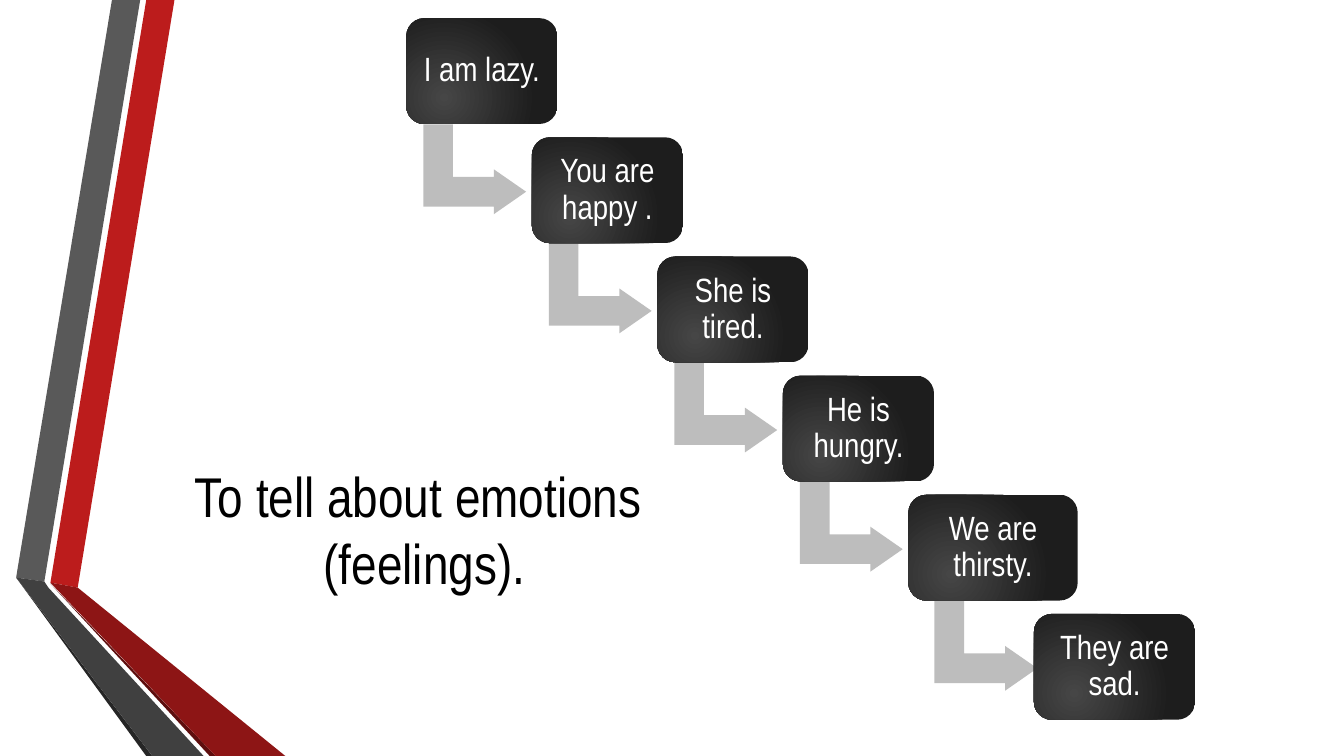
from lxml.etree import SubElement
from pptx import Presentation
from pptx.dml.color import RGBColor
from pptx.enum.shapes import MSO_SHAPE as Preset
from pptx.enum.text import MSO_ANCHOR as Anchor, PP_ALIGN as Align
from pptx.oxml.ns import qn
from pptx.util import Inches, Pt

WIDTH, HEIGHT = Inches(13.33), Inches(7.5)
FONT = "Arial Narrow"

BLACK = RGBColor(0x00, 0x00, 0x00)
WHITE = RGBColor(0xFF, 0xFF, 0xFF)
ARROW_GRAY = RGBColor(0xBD, 0xBD, 0xBD)
CARD_LIGHT = RGBColor(0x46, 0x46, 0x46)
CARD_DARK = RGBColor(0x1D, 0x1D, 0x1D)
RED = RGBColor(0xBC, 0x1C, 0x1C)
RED_FOLD = RGBColor(0x8D, 0x15, 0x15)
RED_EDGE = RGBColor(0x5E, 0x0E, 0x0E)
GRAY = RGBColor(0x59, 0x59, 0x59)
GRAY_FOLD = RGBColor(0x40, 0x40, 0x40)
GRAY_EDGE = RGBColor(0x26, 0x26, 0x26)

# All lengths below are percentages of the slide's width and height
RIBBONS = [
    (RED, [(3.75, 77.07), (5.78, 77.73), (12.98, 0), (10.88, 0)]),
    (GRAY, [(10.43, 0), (8.33, 0), (1.2, 76.4), (3.3, 76.93)]),
    (GRAY_EDGE, [(1.2, 76.4), (10.88, 100), (11.33, 100)]),
    (RED_EDGE, [(3.75, 77.2), (15.6, 100), (16.05, 100)]),
    (RED_FOLD, [(3.75, 77.07), (16.05, 100), (21.23, 100), (5.78, 77.73)]),
    (GRAY_FOLD, [(15.15, 100), (3.6, 77.73), (3.3, 76.93), (1.2, 76.4), (11.33, 100)]),
]

# Staircase: first card, distance between cards, card and arrow sizes
START_X, START_Y = 30.23, 2.4
STEP_X, STEP_Y = 9.34, 15.76
CARD_WIDTH, CARD_HEIGHT = 11.25, 14
ARROW_X, ARROW_Y = 1.75, 13.2
ARROW_WIDTH, ARROW_HEIGHT = 6.68, 13.6
CARDS = [
    ("I am lazy.", CARD_WIDTH),
    ("You are happy .", CARD_WIDTH),
    ("She is tired.", CARD_WIDTH),
    ("He is hungry.", CARD_WIDTH),
    ("We are thirsty.", 12.6),
    ("They are sad.", 12),
]


def across(percent):
    return round(WIDTH * percent / 100)


def down(percent):
    return round(HEIGHT * percent / 100)


def frame(left, top, width, height):
    return across(left), down(top), across(width), down(height)


def set_all(target, values):
    for name, value in values.items():
        setattr(target, name, value)


def paint(shape, color):
    shape.shadow.inherit = False
    shape.line.fill.background()
    shape.fill.solid()
    shape.fill.fore_color.rgb = color


def paint_glow(shape, inner, outer):
    """Fill with a circular gradient centred below the middle."""
    paint(shape, outer)
    shape.fill.gradient()
    for stop, color in zip(shape.fill.gradient_stops, (inner, outer)):
        stop.color.rgb = color
    gradient = shape._element.spPr.find(qn("a:gradFill"))
    gradient.remove(gradient.find(qn("a:lin")))
    circle = SubElement(gradient, qn("a:path"), {"path": "circle"})
    SubElement(circle, qn("a:fillToRect"),
               {"l": "50000", "t": "100000", "r": "100000", "b": "50000"})


def write(shape, lines, size, color, inset, spacing):
    text_frame = shape.text_frame
    set_all(text_frame, {
        "word_wrap": True, "vertical_anchor": Anchor.MIDDLE,
        "margin_left": inset, "margin_right": inset,
        "margin_top": inset, "margin_bottom": inset,
    })
    paragraph = text_frame.paragraphs[0]
    set_all(paragraph, {"alignment": Align.CENTER, "line_spacing": spacing})
    for index, line in enumerate(lines):
        if index:
            paragraph.add_line_break()
        run = paragraph.add_run()
        run.text = line
        set_all(run.font, {"name": FONT, "size": Pt(size)})
        run.font.color.rgb = color


def add_ribbon(slide, color, points):
    corners = [(across(x), down(y)) for x, y in points]
    builder = slide.shapes.build_freeform(*corners[0])
    builder.add_line_segments(corners[1:], close=True)
    paint(builder.convert_to_shape(), color)


def add_title(slide, lines):
    box = slide.shapes.add_textbox(*frame(-9.53, 57.07, 82.22, 25.6))
    write(box, lines, 40, BLACK, Inches(0.1), 1.0)


def add_arrow(slide, left, top):
    arrow = slide.shapes.add_shape(
        Preset.BENT_UP_ARROW, *frame(left, top, ARROW_WIDTH, ARROW_HEIGHT))
    arrow.rotation = 90
    for index, value in enumerate((0.33, 0.25, 0.36)):
        arrow.adjustments[index] = value
    paint(arrow, ARROW_GRAY)


def add_card(slide, text, left, top, width):
    card = slide.shapes.add_shape(
        Preset.ROUNDED_RECTANGLE, *frame(left, top, width, CARD_HEIGHT))
    card.adjustments[0] = 0.17
    paint_glow(card, CARD_LIGHT, CARD_DARK)
    write(card, [text], 24, WHITE, Inches(0.1), 0.9)


def main():
    presentation = Presentation()
    set_all(presentation, {"slide_width": WIDTH, "slide_height": HEIGHT})
    slide = presentation.slides.add_slide(presentation.slide_layouts[6])

    # Folded ribbons on the left
    for color, points in RIBBONS:
        add_ribbon(slide, color, points)

    add_title(slide, ["To tell about emotions ", "(feelings)."])

    # Staircase of cards, each but the last with an arrow to the next
    for index, (text, width) in enumerate(CARDS):
        left, top = START_X + index * STEP_X, START_Y + index * STEP_Y
        if index < len(CARDS) - 1:
            widening = (width - CARD_WIDTH) / 2
            add_arrow(slide, left + ARROW_X + widening, top + ARROW_Y)
        add_card(slide, text, left, top, width)

    presentation.save("out.pptx")


if __name__ == "__main__":
    main()
